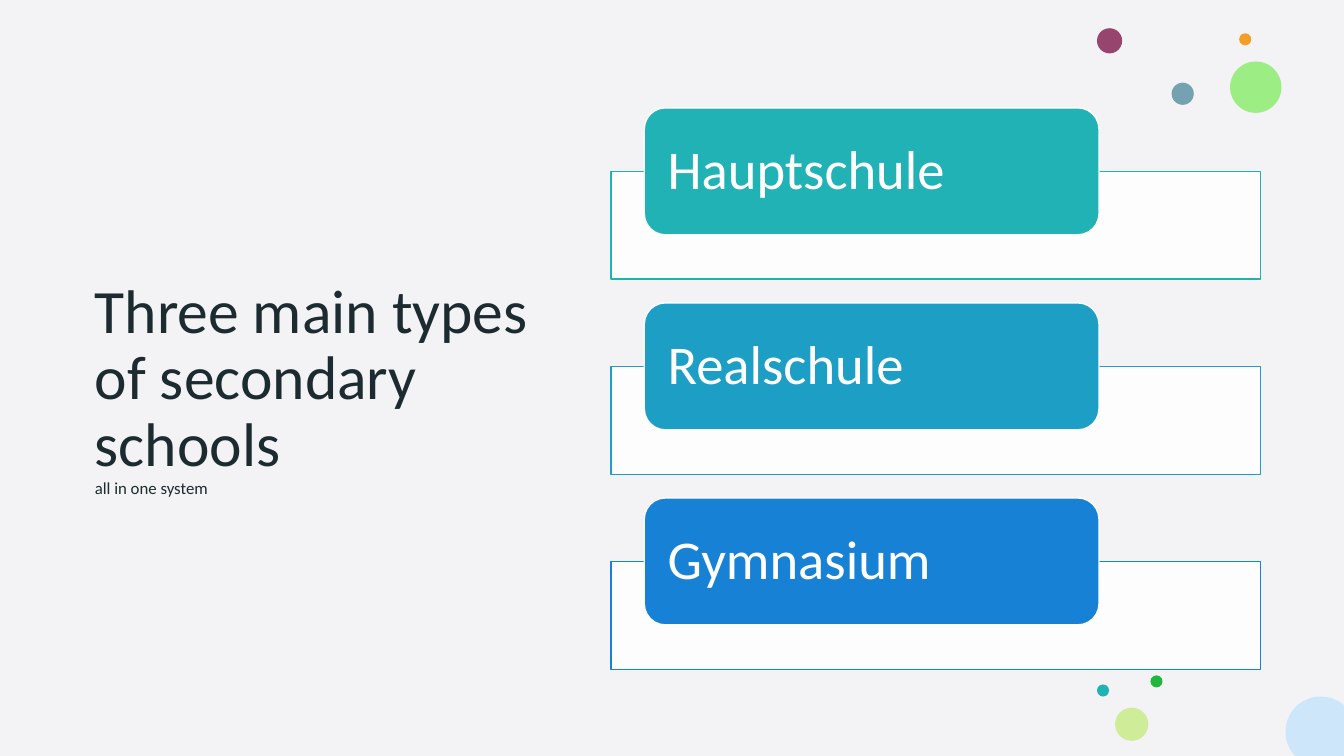
from math import cos, radians, sin

from lxml import etree
from pptx import Presentation
from pptx.dml.color import RGBColor
from pptx.enum.shapes import MSO_SHAPE
from pptx.enum.text import MSO_ANCHOR, MSO_AUTO_SIZE, PP_ALIGN
from pptx.oxml.ns import qn
from pptx.util import Inches, Pt

RECT, ROUND, OVAL = MSO_SHAPE.RECTANGLE, MSO_SHAPE.ROUNDED_RECTANGLE, MSO_SHAPE.OVAL
MIDDLE, LEFT, NO_FIT = MSO_ANCHOR.MIDDLE, PP_ALIGN.LEFT, MSO_AUTO_SIZE.NONE

FONT = "Calibri"
WIDTH, HEIGHT = 13.33, 7.5
COLORS = {
    "back": "F3F2F5", "ink": "1B2B30", "white": "FFFFFF",
    "teal": "20B2B5", "cyan": "1C9EC5", "blue": "1782D5",
    "plum": "97446E", "lime": "7BED59", "orange": "F39E29", "slate": "74A2B1",
    "green": "21B73D", "pale": "CFED98", "sky": "CEE6FA",
}

# School name and colour
SCHOOLS = [("Hauptschule", "teal"), ("Realschule", "cyan"), ("Gymnasium", "blue")]
TOP, STEP = 1.07, 1.935

# Left, top, diameter, colour, opacity in percent
DOTS = [
    (10.88, 0.28, 0.25, "plum", 100),
    (12.2, 0.61, 0.51, "lime", 72),
    (12.29, 0.33, 0.12, "orange", 100),
    (11.62, 0.82, 0.22, "slate", 100),
    (11.41, 6.7, 0.12, "green", 100),
    (11.06, 7.02, 0.33, "pale", 100),
    (10.88, 6.79, 0.12, "teal", 100),
]


def rgb(name):
    return RGBColor.from_string(COLORS[name])


def paint(shape, fill, line=None, alpha=100):
    shape.shadow.inherit = False
    shape.fill.solid()
    shape.fill.fore_color.rgb = rgb(fill)
    if alpha < 100:
        color = shape.fill._xPr.find(qn("a:solidFill"))[0]
        etree.SubElement(color, qn("a:alpha")).set("val", str(alpha * 1000))
    if line:
        shape.line.color.rgb = rgb(line)
        shape.line.width = Pt(1)
    else:
        shape.line.fill.background()


def add_box(slide, kind, box, fill, line=None, alpha=100):
    shape = slide.shapes.add_shape(kind, *map(Inches, box))
    paint(shape, fill, line, alpha)
    return shape


def style(para, size, color):
    para.alignment = LEFT
    para.line_spacing = 0.9
    para.space_before = Pt(0)
    para.font.name = FONT
    para.font.size = Pt(size)
    para.font.bold = False
    para.font.color.rgb = rgb(color)


def add_title(slide):
    title = slide.shapes.title
    title.left, title.top = Inches(0.84), Inches(1.04)
    title.width, title.height = Inches(5.04), Inches(5.64)
    frame = title.text_frame
    frame.word_wrap = True
    frame.auto_size = NO_FIT
    frame.vertical_anchor = MIDDLE
    frame.text = "Three main types of secondary schools\nall in one system"
    for para, size in zip(frame.paragraphs, (44, 12)):
        style(para, size, "ink")


def add_school(slide, top, name, color):
    add_box(slide, RECT, (6.06, top + 0.63, 6.44, 1.07), "white", color, 90)
    label = add_box(slide, ROUND, (6.39, top, 4.51, 1.26), color, "white")
    frame = label.text_frame
    frame.margin_left = frame.margin_right = Inches(0.17)
    frame.margin_top = frame.margin_bottom = 0
    frame.word_wrap = True
    frame.vertical_anchor = MIDDLE
    frame.text = name
    style(frame.paragraphs[0], 39, "white")


def add_corner(slide, x, y, radius, fill):
    # Circle cut off at the right and bottom slide edges
    points = [(Inches(min(x + radius * cos(radians(deg)), WIDTH)),
               Inches(min(y + radius * sin(radians(deg)), HEIGHT)))
              for deg in range(0, 360, 5)]
    path = slide.shapes.build_freeform(*points[0])
    path.add_line_segments(points[1:], close=True)
    paint(path.convert_to_shape(), fill)


def main():
    deck = Presentation()
    deck.slide_width, deck.slide_height = Inches(WIDTH), Inches(HEIGHT)
    slide = deck.slides.add_slide(deck.slide_layouts[5])
    slide.background.fill.solid()
    slide.background.fill.fore_color.rgb = rgb("back")

    add_title(slide)

    # Loose dots in the right-hand corners
    for left, top, size, color, alpha in DOTS:
        add_box(slide, OVAL, (left, top, size, size), color, alpha=alpha)
    add_corner(slide, 13.1, 7.26, 0.35, "sky")

    # School types
    for row, (name, color) in enumerate(SCHOOLS):
        add_school(slide, TOP + row * STEP, name, color)

    deck.save("out.pptx")


if __name__ == "__main__":
    main()
